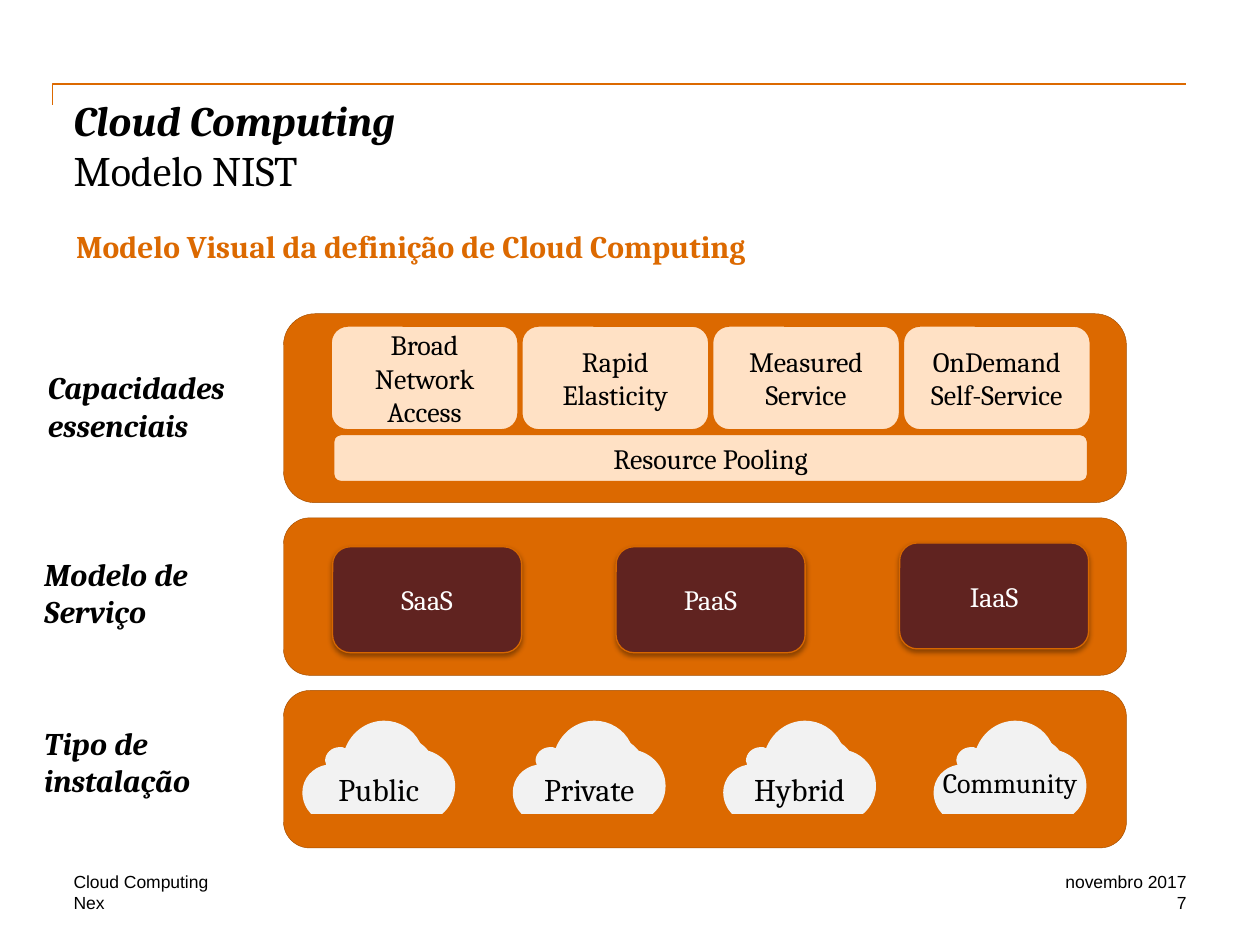
from dataclasses import dataclass
from typing import Any

from lxml import etree
from pptx import Presentation
from pptx import util as u
from pptx.dml.color import RGBColor
from pptx.enum import shapes, text
from pptx.oxml import ns

ORANGE = RGBColor(0xDC, 0x69, 0x00)
BROWN = RGBColor(0xA3, 0x4E, 0x00)
PEACH = RGBColor(0xFF, 0xE1, 0xC5)
MAROON = RGBColor(0x60, 0x23, 0x20)
EDGE = RGBColor(0xD7, 0x67, 0x00)
CLOUD_GREY = RGBColor(0xF2, 0xF2, 0xF2)
BLACK = RGBColor(0, 0, 0)
WHITE = RGBColor(0xFF, 0xFF, 0xFF)

LEFT, CENTER, RIGHT = text.PP_ALIGN.LEFT, text.PP_ALIGN.CENTER, text.PP_ALIGN.RIGHT
TOP, MIDDLE, BOTTOM = text.MSO_ANCHOR.TOP, text.MSO_ANCHOR.MIDDLE, text.MSO_ANCHOR.BOTTOM
NO_INSETS = (0, 0, 0, 0)
DEFAULT_INSETS = (7.2, 3.6, 7.2, 3.6)

CLOUD_START = (87.3, 37.4)
CLOUD_CURVES = [
    [(87.3, 43.9), (84.2, 49.7), (79.9, 53.3)],
    [(5, 53.3)],
    [(2.2, 50.4), (0, 46.1), (0, 41)],
    [(0, 33.1), (5.8, 26.6), (13.7, 25.2)],
    [(13, 24.5), (13, 23.8), (13, 23)],
    [(13, 18.7), (16.6, 15.1), (21.6, 15.1)],
    [(22.3, 15.1), (23.8, 15.1), (24.5, 15.8)],
    [(28.1, 6.5), (36.7, 0), (46.8, 0)],
    [(55.4, 0), (63.4, 5), (67, 12.2)],
    [(69.1, 16.6)],
    [(79.2, 18), (87.3, 26.6), CLOUD_START],
]


@dataclass(frozen=True)
class Area:
    left: float
    top: float
    width: float
    height: float

    def lengths(self) -> list[u.Length]:
        return [u.Pt(value) for value in (self.left, self.top, self.width, self.height)]


@dataclass(frozen=True)
class BoxStyle:
    fill: RGBColor
    line: RGBColor | None = None
    line_width: float = 0
    raised: bool = False


@dataclass(frozen=True)
class Band:
    label: str
    label_left: float
    label_top: float
    top: float
    height: float


BAND_STYLE = BoxStyle(ORANGE, BROWN, 0.25)
CAPABILITY_STYLE = BoxStyle(PEACH, ORANGE, 2)
SERVICE_STYLE = BoxStyle(MAROON, EDGE, 0.75, raised=True)
CLOUD_STYLE = BoxStyle(CLOUD_GREY)

BANDS = [
    Band("Capacidades\vessenciais", 27.36, 210.24, 179.28, 108),
    Band("Modelo de\nServiço", 25.2, 317, 295.92, 90),
    Band("Tipo de\ninstalação", 25.2, 413.5, 394.56, 90),
]
CAPABILITIES = ["Broad Network Access", "Rapid Elasticity", "Measured Service", "OnDemand\nSelf-Service"]
SERVICES = [("SaaS", 312.48), ("PaaS", 312.48), ("IaaS", 310.32)]
CLOUDS = ["Public", "Private", "Hybrid", "Community"]


def write(shape: Any, content: str, *, size: float, font: str = "Cambria",
          color: RGBColor = BLACK, bold: bool = False, italic: bool = False,
          align: text.PP_ALIGN = LEFT, anchor: text.MSO_ANCHOR = TOP,
          insets: tuple = DEFAULT_INSETS, wrap: bool = True) -> Any:
    frame = shape.text_frame
    frame.word_wrap = wrap
    frame.vertical_anchor = anchor
    frame.margin_left, frame.margin_top, frame.margin_right, frame.margin_bottom = map(u.Pt, insets)
    frame.text = content
    for para in frame.paragraphs:
        para.alignment = align
        for span in para.runs:
            span.font.name, span.font.size = font, u.Pt(size)
            span.font.bold, span.font.italic = bold, italic
            span.font.color.rgb = color
    return frame


def add_text(page: Any, area: Area, content: str, **style: Any) -> Any:
    return write(page.shapes.add_textbox(*area.lengths()), content, **style)


def paint(shape: Any, style: BoxStyle) -> None:
    shape.shadow.inherit = False
    shape.fill.solid()
    shape.fill.fore_color.rgb = style.fill
    if style.line is None:
        shape.line.fill.background()
    else:
        shape.line.color.rgb = style.line
        shape.line.width = u.Pt(style.line_width)
    if style.raised:
        effects = shape._element.spPr.find(ns.qn("a:effectLst"))
        shadow = etree.SubElement(effects, ns.qn("a:outerShdw"), blurRad=str(u.Pt(3.1)),
                                  dist=str(u.Pt(1.6)), dir="5400000", rotWithShape="0")
        tint = etree.SubElement(shadow, ns.qn("a:srgbClr"), val=str(BLACK))
        etree.SubElement(tint, ns.qn("a:alpha"), val="38000")


def add_box(page: Any, area: Area, style: BoxStyle) -> Any:
    box = page.shapes.add_shape(shapes.MSO_SHAPE.ROUNDED_RECTANGLE, *area.lengths())
    paint(box, style)
    return box


def bend_segments(shape: Any, curves: list) -> None:
    segments = list(shape._element.iter(ns.qn("a:lnTo")))
    for segment, curve in zip(segments, curves):
        if len(curve) == 3:
            bend = etree.Element(ns.qn("a:cubicBezTo"))
            for x, y in curve:
                etree.SubElement(bend, ns.qn("a:pt"), x=str(u.Pt(x)), y=str(u.Pt(y)))
            segment.getparent().replace(segment, bend)


def add_cloud(page: Any, left: float, top: float) -> Any:
    group = page.shapes.add_group_shape()
    core = Area(left + 20.88, top + 7.2, 54, 36.72)
    paint(group.shapes.add_shape(shapes.MSO_SHAPE.OVAL, *core.lengths()), CLOUD_STYLE)
    corners = [CLOUD_START, *(curve[-1] for curve in CLOUD_CURVES)]
    points = [(u.Pt(left + x), u.Pt(top + y)) for x, y in corners]
    builder = group.shapes.build_freeform(*points[0])
    builder.add_line_segments(points[1:], close=True)
    cloud = builder.convert_to_shape()
    bend_segments(cloud, CLOUD_CURVES)
    paint(cloud, CLOUD_STYLE)
    return cloud


def add_title_rule(page: Any) -> None:
    rule = page.shapes.add_connector(shapes.MSO_CONNECTOR.ELBOW,
                                     u.Pt(360), u.Pt(378), u.Pt(348), u.Pt(-270))
    rule.line.color.rgb = ORANGE
    rule.line.width = u.Pt(1)
    properties = rule._element.spPr
    properties.find(ns.qn("a:xfrm")).set("rot", "5400000")
    properties.find(ns.qn("a:prstGeom")).set("prst", "bentConnector2")
    etree.SubElement(properties, ns.qn("a:effectLst"))


def main() -> None:
    deck = Presentation()
    deck.slide_width, deck.slide_height = u.Pt(720), u.Pt(540)
    page = deck.slides.add_slide(deck.slide_layouts[6])

    add_title_rule(page)
    title = add_text(page, Area(42, 54, 636, 72), "Cloud Computing\vModelo NIST",
                     size=24, bold=True, italic=True, insets=NO_INSETS)
    subtitle_font = title.paragraphs[0].runs[1].font
    subtitle_font.bold = subtitle_font.italic = False
    heading = add_text(page, Area(36.4, 126, 533.5, 28.8),
                       "Modelo Visual da definição de Cloud Computing",
                       size=18, color=ORANGE, bold=True)
    heading.auto_size = text.MSO_AUTO_SIZE.SHAPE_TO_FIT_TEXT

    footer = dict(size=10, font="Arial", insets=NO_INSETS)
    add_text(page, Area(42, 498, 414, 12), "Cloud Computing", anchor=BOTTOM, **footer)
    add_text(page, Area(42, 510, 204, 12), "Nex", **footer)
    add_text(page, Area(558, 498, 120, 12), "novembro 2017", align=RIGHT, **footer)
    add_text(page, Area(558, 510, 120, 12), "7", align=RIGHT, **footer)

    for band in BANDS:
        add_box(page, Area(162, band.top, 481.68, band.height), BAND_STYLE)
        add_text(page, Area(band.label_left, band.label_top, 106, 72), band.label,
                 size=18, bold=True, italic=True, insets=NO_INSETS)

    centred = dict(size=16, align=CENTER, anchor=MIDDLE)
    pool = add_box(page, Area(190.08, 247.68, 432, 28.08), CAPABILITY_STYLE)
    write(pool, "Resource Pooling", **centred)
    for index, name in enumerate(CAPABILITIES):
        box = add_box(page, Area(188.64 + 109 * index, 185.76, 108, 60.48), CAPABILITY_STYLE)
        write(box, name, **centred)
    for index, (name, top) in enumerate(SERVICES):
        box = add_box(page, Area(190.08 + 162 * index, top, 108, 60.48), SERVICE_STYLE)
        write(box, name, color=WHITE, **centred)
    for index, name in enumerate(CLOUDS):
        cloud = add_cloud(page, 172.8 + 120.24 * index, 411.84)
        fit = dict(size=16, insets=(7.2, 3.6, 7.2, 8.64), wrap=False) if name == "Community" else dict(size=18)
        write(cloud, name, align=CENTER, anchor=BOTTOM, **fit)

    deck.save("out.pptx")


if __name__ == "__main__":
    main()
